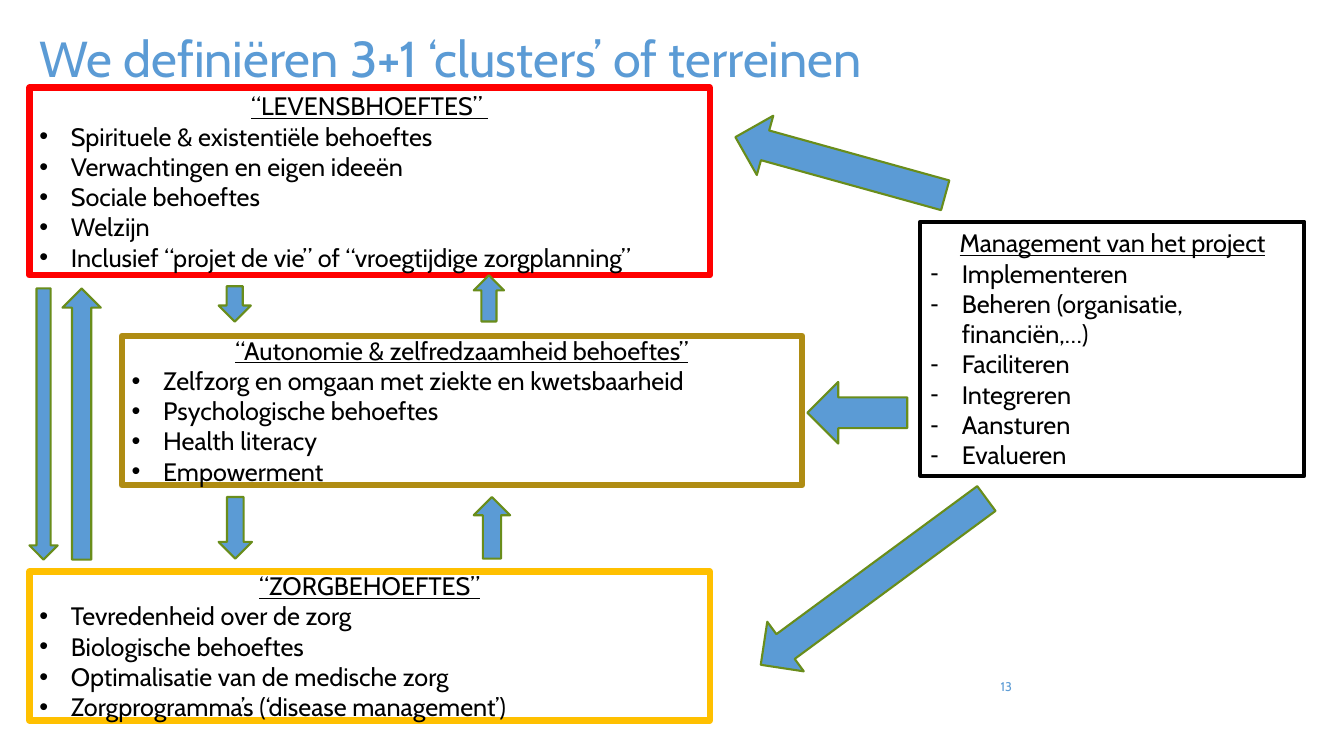
"""Build the slide on three need clusters and the project management around them."""
from lxml import etree
from pptx import Presentation
from pptx.dml.color import RGBColor
from pptx.enum import shapes, text
from pptx.oxml import ns
from pptx.util import Pt

FONT = "Cabin"
BLUE, GREEN, BLACK, WHITE = "5B9BD5", "698D1B", "000000", "FFFFFF"
LEFT, CENTER, RIGHT = text.PP_ALIGN.LEFT, text.PP_ALIGN.CENTER, text.PP_ALIGN.RIGHT
TOP, MIDDLE = text.MSO_ANCHOR.TOP, text.MSO_ANCHOR.MIDDLE
INDENT = 22.5

TITLE = "We definiëren 3+1 ‘clusters’ of terreinen"
PAGE_NUMBER = "13"

BOXES = [
    {"place": (21, 62.6, 486, 134), "line": "FF0000", "width": 4.5, "fill": None,
     "bullet": "•", "heading": "“LEVENSBHOEFTES” ",
     "items": ["Spirituele & existentiële behoeftes", "Verwachtingen en eigen ideeën",
               "Sociale behoeftes", "Welzijn",
               "Inclusief “projet de vie” of “vroegtijdige zorgplanning”"]},
    {"place": (87, 240, 486, 106.5), "line": "AF8C13", "width": 4.5, "fill": None,
     "bullet": "•", "heading": "“Autonomie & zelfredzaamheid behoeftes”",
     "items": ["Zelfzorg en omgaan met ziekte en kwetsbaarheid",
               "Psychologische behoeftes", "Health literacy", "Empowerment"]},
    {"place": (21, 408.2, 486, 106.5), "line": "FFC000", "width": 4.5, "fill": None,
     "bullet": "•", "heading": "“ZORGBEHOEFTES”",
     "items": ["Tevredenheid over de zorg", "Biologische behoeftes",
               "Optimalisatie van de medische zorg",
               "Zorgprogramma’s (‘disease management’)"]},
    {"place": (657.4, 158.4, 274.3, 181.4), "line": BLACK, "width": 3, "fill": WHITE,
     "bullet": "-", "heading": "Management van het project",
     "items": ["Implementeren", "Beheren (organisatie, financiën,…)", "Faciliteren",
               "Integreren", "Aansturen", "Evalueren"]},
]

ARROWS = [
    ((156.2, 204.5, 23, 25.2), 0),
    ((156.2, 355, 23.8, 44), 0),
    ((21, 206, 20.2, 193.7), 0),
    ((44.6, 206, 27.4, 193.7), 180),
    ((338.4, 355, 26, 44), 180),
    ((338.4, 196.6, 21.6, 33), 180),
    ((578.2, 41, 44, 155.5), 105.5),
    ((602, 315.4, 44, 200.2), 53.6),
    ((590.4, 259.2, 44, 71.3), 90),
]


def rgb(value):
    """Turn a hex string into a colour."""
    return RGBColor.from_string(value)


def points(place):
    """Turn a tuple of numbers into lengths."""
    return [Pt(number) for number in place]


def write(paragraph, words, size=18, color=BLACK, align=LEFT, underline=False):
    """Write formatted words into a paragraph."""
    paragraph.alignment = align
    run = paragraph.add_run()
    run.text = words
    run.font.name = FONT
    run.font.size = Pt(size)
    run.font.underline = underline
    run.font.color.rgb = rgb(color)


def set_frame(shape, anchor):
    """Wrap the text of a shape and anchor it."""
    frame = shape.text_frame
    frame.word_wrap = True
    frame.auto_size = text.MSO_AUTO_SIZE.NONE
    frame.vertical_anchor = anchor
    return frame


def add_bullet(paragraph, character):
    """Give a paragraph a hanging bullet."""
    properties = paragraph._p.get_or_add_pPr()
    properties.set("marL", str(Pt(INDENT)))
    properties.set("indent", str(-Pt(INDENT)))
    color = etree.SubElement(properties, ns.qn("a:buClr"))
    etree.SubElement(color, ns.qn("a:srgbClr"), val=BLACK)
    etree.SubElement(properties, ns.qn("a:buFont"), typeface="Arial")
    etree.SubElement(properties, ns.qn("a:buChar"), char=character)


def add_shape(slide, kind, place, fill, line, width):
    """Add a flat preset shape."""
    shape = slide.shapes.add_shape(kind, *points(place))
    shape.shadow.inherit = False
    if fill:
        shape.fill.solid()
        shape.fill.fore_color.rgb = rgb(fill)
    else:
        shape.fill.background()
    shape.line.color.rgb = rgb(line)
    shape.line.width = Pt(width)
    return shape


def add_box(slide, box):
    """Add a framed box with a heading and a list."""
    shape = add_shape(slide, shapes.MSO_SHAPE.RECTANGLE, box["place"],
                      box["fill"], box["line"], box["width"])
    frame = set_frame(shape, MIDDLE)
    write(frame.paragraphs[0], box["heading"], align=CENTER, underline=True)
    for item in box["items"]:
        paragraph = frame.add_paragraph()
        write(paragraph, item)
        add_bullet(paragraph, box["bullet"])


def main():
    """Build and save the slide."""
    presentation = Presentation()
    presentation.slide_width, presentation.slide_height = Pt(960), Pt(540)
    slide = presentation.slides.add_slide(presentation.slide_layouts[5])

    title = slide.shapes.title
    title.left, title.top, title.width, title.height = points((21, 21, 828, 104.4))
    heading = set_frame(title, TOP).paragraphs[0]
    heading.line_spacing = 0.9
    write(heading, TITLE, size=36, color=BLUE)

    for box in BOXES:
        add_box(slide, box)

    number = slide.shapes.add_textbox(*points((676, 476, 54, 28.8)))
    write(set_frame(number, MIDDLE).paragraphs[0], PAGE_NUMBER, size=9, color=BLUE, align=RIGHT)

    for place, rotation in ARROWS:
        arrow = add_shape(slide, shapes.MSO_SHAPE.DOWN_ARROW, place, BLUE, GREEN, 1.5)
        arrow.rotation = rotation

    presentation.save("out.pptx")


if __name__ == "__main__":
    main()
